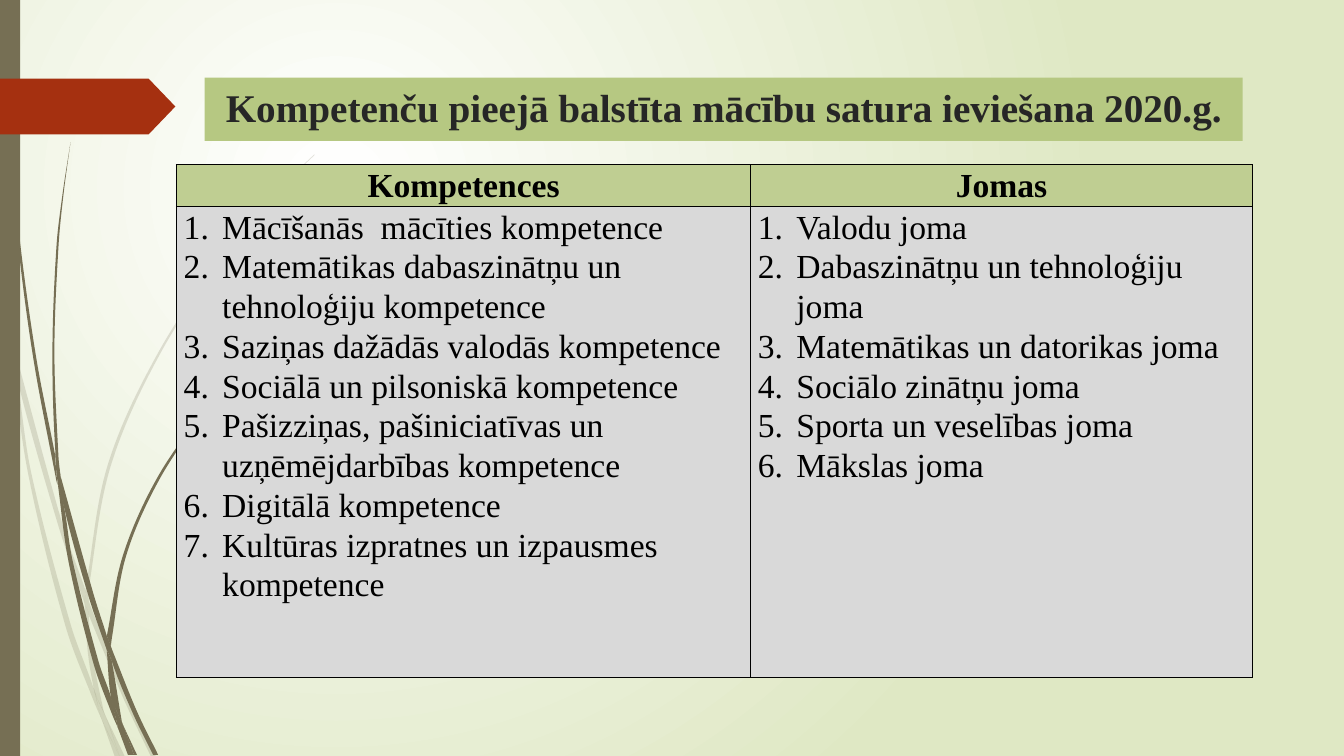
"""Builds a slide with a table of competences and areas beside grass blades."""
from math import dist
from lxml.etree import SubElement
from pptx import Presentation
from pptx.dml.color import RGBColor
from pptx.enum.shapes import MSO_SHAPE as Preset
from pptx.enum.text import MSO_ANCHOR as Anchor, PP_ALIGN as Align
from pptx.oxml import parse_xml
from pptx.oxml.ns import nsdecls, qn
from pptx.util import Cm, Pt

TITLE = "Kompetenču pieejā balstīta mācību satura ieviešana 2020.g."
COLUMNS = {
    "Kompetences": [
        "Mācīšanās  mācīties kompetence",
        "Matemātikas dabaszinātņu un tehnoloģiju kompetence",
        "Saziņas dažādās valodās kompetence",
        "Sociālā un pilsoniskā kompetence",
        "Pašizziņas, pašiniciatīvas un uzņēmējdarbības kompetence",
        "Digitālā kompetence",
        "Kultūras izpratnes un izpausmes kompetence",
    ],
    "Jomas": [
        "Valodu joma",
        "Dabaszinātņu un tehnoloģiju joma",
        "Matemātikas un datorikas joma",
        "Sociālo zinātņu joma",
        "Sporta un veselības joma",
        "Mākslas joma",
    ],
}
WIDTHS = [14.47, 12.64]
HEIGHTS = [1.06, 11.86]
FONT = "Times New Roman"
OLIVE, RED, BLACK = "766F54", "A53010", "000000"
CM_PER_INCH = 2.54

PALE_BLADES = [
    ([(.11, 3.5), (.09, 3.22), (0, 2.82)], [(0, 2.99), (.1, 3.44), (.11, 3.5)]),
    ([(.14, 3.45), (.17, 3.76), (.58, 5.22), (.84, 5.99)],
     [(.85, 5.86), (.62, 5.2), (.14, 3.45)]),
    ([(.88, 5.96), (.88, 6.1)], [(.88, 6.1), (1.23, 6.94), (1.5, 7.51)],
     [(1.55, 7.51), (1.27, 6.92), (.92, 6.07), (.88, 5.96)]),
    ([(1.05, 7.11), (1.19, 7.51)], [(1.24, 7.51), (1.05, 7.11)]),
    ([(.11, 3.5), (.28, 4.7), (.65, 6.21), (.92, 6.93), (1.01, 7.14)],
     [(1.01, 7.14), (.99, 7.07), (.93, 6.83), (.7, 6.19), (.31, 4.69), (.17, 3.76),
      (.11, 3.5)]),
    ([(.84, 5.99), (.87, 6.46), (.93, 6.83), (.96, 6.92), (1.05, 7.11)],
     [(1.05, 7.11), (1.03, 7.06), (.91, 6.46), (.88, 6.1), (.88, 6.08), (.84, 5.99)]),
    ([(3.12, 1.53), (2.89, 1.75), (2.68, 1.97), (2.28, 2.44), (1.58, 3.48),
      (1.07, 4.61), (.85, 5.84), (.85, 5.86)],
     [(.88, 5.96), (.88, 5.84), (1.1, 4.62), (1.6, 3.49), (2.29, 2.45),
      (2.68, 1.98), (2.9, 1.75), (3.12, 1.54)]),
    ([(1.01, 7.14), (1.14, 7.51)], [(1.19, 7.51), (1.01, 7.14)]),
    ([(.88, 6.08), (.88, 6.1)], [(.88, 5.96), (.85, 5.86)],
     [(.84, 5.99), (.88, 6.08)]),
    ([(.96, 6.92), (.93, 6.83), (.99, 7.07), (1.01, 7.14), (1.19, 7.51)],
     [(1.19, 7.51), (1.05, 7.11), (.96, 6.92)]),
]
DARK_BLADES = [
    ([(.03, 0), (.04, .48), (.07, 1.1), (.17, 2.33), (.33, 3.55), (.56, 4.77),
      (.57, 4.81)],
     [(.57, 4.81), (.55, 4.57), (.55, 4.53), (.36, 3.55), (.19, 2.32), (.08, 1.09),
      (.05, .48), (.04, 0)]),
    ([(.6, 4.72), (.64, 5.05), (.88, 5.92), (1.06, 6.45)],
     [(1.06, 6.33), (1.06, 6.31), (.93, 5.9), (.6, 4.72)]),
    ([(1.1, 6.41), (1.11, 6.56), (1.32, 7.08), (1.52, 7.49)],
     [(1.57, 7.49), (1.36, 7.06), (1.13, 6.49), (1.1, 6.41)]),
    ([(.57, 4.77), (.68, 5.57), (.93, 6.59), (1.11, 7.08), (1.17, 7.22)],
     [(1.17, 7.22), (1.16, 7.17), (1.1, 6.91), (.98, 6.57), (.72, 5.56),
      (.64, 5.05), (.57, 4.77)]),
    ([(.7, 1.41), (.62, 1.93), (.56, 2.45), (.52, 3.49), (.55, 4.49), (.6, 4.72)],
     [(.6, 4.72), (.58, 4.53), (.54, 3.49), (.58, 2.45), (.63, 1.93), (.7, 1.41)]),
    ([(1.22, 7.19), (1.33, 7.49)], [(1.36, 7.49), (1.22, 7.19)]),
    ([(.55, 4.49), (.55, 4.53), (.57, 4.77), (.64, 5.05)],
     [(.64, 5.05), (.6, 4.72), (.55, 4.49)]),
    ([(2.6, 3.44), (2.45, 3.58), (2.31, 3.73), (2.04, 4.05), (1.56, 4.74),
      (1.22, 5.51), (1.06, 6.31)],
     [(1.1, 6.41), (1.11, 6.33), (1.25, 5.52), (1.58, 4.76), (2.05, 4.06),
      (2.31, 3.74), (2.45, 3.59), (2.61, 3.44)]),
    ([(1.17, 7.22), (1.27, 7.49)], [(1.31, 7.49), (1.17, 7.22)]),
    ([(1.06, 6.45), (1.1, 6.91), (1.16, 7.06), (1.22, 7.19)],
     [(1.22, 7.19), (1.21, 7.16), (1.11, 6.56), (1.09, 6.51), (1.06, 6.45)]),
    ([(1.06, 6.45), (1.09, 6.51), (1.11, 6.56)],
     [(1.11, 6.56), (1.1, 6.41), (1.06, 6.31)]),
    ([(1.16, 7.06), (1.1, 6.91), (1.16, 7.17), (1.17, 7.22), (1.3, 7.49)],
     [(1.33, 7.49), (1.22, 7.19), (1.16, 7.06)]),
]


def color(code):
    return RGBColor.from_string(code)


def paint(shape, code):
    shape.fill.solid()
    shape.fill.fore_color.rgb = color(code)
    shape.line.fill.background()
    shape.shadow.inherit = False


def curve_points(knots):
    ends = [knots[0], *knots, knots[-1]]
    slopes = [tuple((c - a) / (dist(p, q) + dist(q, r)) for a, c in zip(p, r))
              for p, q, r in zip(ends, ends[1:], ends[2:])]
    points = []
    for p, q, leave, arrive in zip(knots, knots[1:], slopes, slopes[1:]):
        third = dist(p, q) / 3
        points += [tuple(a + s * third for a, s in zip(p, leave)),
                   tuple(a - s * third for a, s in zip(q, arrive)), q]
    return points


def add_blade(page, edges, opacity):
    points = [edges[0][0]]
    for edge in edges:
        if edge[0] != points[-1]:
            points += [points[-1], edge[0], edge[0]]
        points += curve_points(edge)
    points = [tuple(Cm(value * CM_PER_INCH) for value in point) for point in points]
    builder = page.shapes.build_freeform(*points[0])
    builder.add_line_segments(points[1:], close=True)
    blade = builder.convert_to_shape()
    outline = blade._element.xpath(".//a:pathLst/*")[0]
    lines = outline.findall(qn("a:lnTo"))
    for start in range(0, len(points) - 1, 3):
        bend = SubElement(outline, qn("a:cubicBezTo"))
        lines[start].addprevious(bend)
        for line in lines[start:start + 3]:
            bend.append(line[0])
    for line in lines:
        outline.remove(line)
    paint(blade, OLIVE)
    if opacity < 100:
        tint = blade._element.spPr.find(qn("a:solidFill"))[0]
        SubElement(tint, qn("a:alpha")).set("val", str(opacity * 1000))


def add_block(page, preset, box, code):
    block = page.shapes.add_shape(preset, *map(Cm, box))
    paint(block, code)
    return block


def write(para, text, size, bold, code, align):
    para.alignment = align
    span = para.add_run()
    span.text = text
    for name, value in {"name": FONT, "size": Pt(size), "bold": bold}.items():
        setattr(span.font, name, value)
    span.font.color.rgb = color(code)


def number(para):
    props = para._p.get_or_add_pPr()
    props.set("marL", str(Cm(.97)))
    props.set("indent", str(-Cm(.97)))
    SubElement(props, qn("a:buAutoNum")).set("type", "arabicPeriod")


def fill_cell(cell, lines, code, heading):
    margins = {"margin_left": Cm(.18), "margin_right": Cm(.18),
               "margin_top": 0, "margin_bottom": 0}
    for name, value in margins.items():
        setattr(cell, name, value)
    cell.fill.solid()
    cell.fill.fore_color.rgb = color(code)
    props = cell._tc.get_or_add_tcPr()
    for place, side in enumerate(("lnL", "lnR", "lnT", "lnB")):
        props.insert(place, parse_xml(
            f'<a:{side} {nsdecls("a")} w="12700"><a:solidFill>'
            f'<a:srgbClr val="{BLACK}"/></a:solidFill></a:{side}>'))
    frame = cell.text_frame
    for index, line in enumerate(lines):
        para = frame.add_paragraph() if index else frame.paragraphs[0]
        para.line_spacing = 1.07
        write(para, line, 24, heading, BLACK, Align.CENTER if heading else Align.LEFT)
        if not heading:
            number(para)


def set_background(page):
    fill = page.background.fill
    fill.gradient()
    for stop, code in zip(fill.gradient_stops, ("FFFFFF", "DFE8C4")):
        stop.color.rgb = color(code)
    gradient = page._element.xpath(".//p:bg//a:gradFill")[0]
    gradient.remove(gradient.find(qn("a:lin")))
    gradient.append(parse_xml(
        f'<a:path {nsdecls("a")} path="circle"><a:fillToRect l="50000" t="50000" '
        'r="100000" b="100000"/></a:path>'))


def add_title(page):
    banner = add_block(page, Preset.RECTANGLE, (5.16, 1.96, 26.16, 1.59), "B6C882")
    frame = banner.text_frame
    frame.word_wrap = True
    frame.vertical_anchor = Anchor.MIDDLE
    frame.margin_bottom = Cm(.25)
    write(frame.paragraphs[0], TITLE, 28, True, "262626", Align.CENTER)


def add_columns(page):
    table = page.shapes.add_table(2, len(COLUMNS), Cm(4.45), Cm(4.15),
                                  Cm(sum(WIDTHS)), Cm(sum(HEIGHTS))).table
    table.first_row = table.horz_banding = False
    for row, height in zip(table.rows, HEIGHTS):
        row.height = Cm(height)
    for index, (heading, items) in enumerate(COLUMNS.items()):
        table.columns[index].width = Cm(WIDTHS[index])
        fill_cell(table.cell(0, index), [heading], "BFCE92", True)
        fill_cell(table.cell(1, index), items, "D9D9D9", False)


def main():
    deck = Presentation()
    deck.slide_width, deck.slide_height = Cm(33.87), Cm(19.05)
    page = deck.slides.add_slide(deck.slide_layouts[6])
    set_background(page)
    for blades, opacity in ((PALE_BLADES, 20), (DARK_BLADES, 100)):
        for edges in blades:
            add_blade(page, edges, opacity)
    add_block(page, Preset.RECTANGLE, (0, 0, .51, 19.05), OLIVE)
    arrow = add_block(page, Preset.PENTAGON, (0, 1.98, 4.42, 1.41), RED)
    arrow.adjustments[0] = .48
    add_title(page)
    add_columns(page)
    deck.save("out.pptx")


if __name__ == "__main__":
    main()
